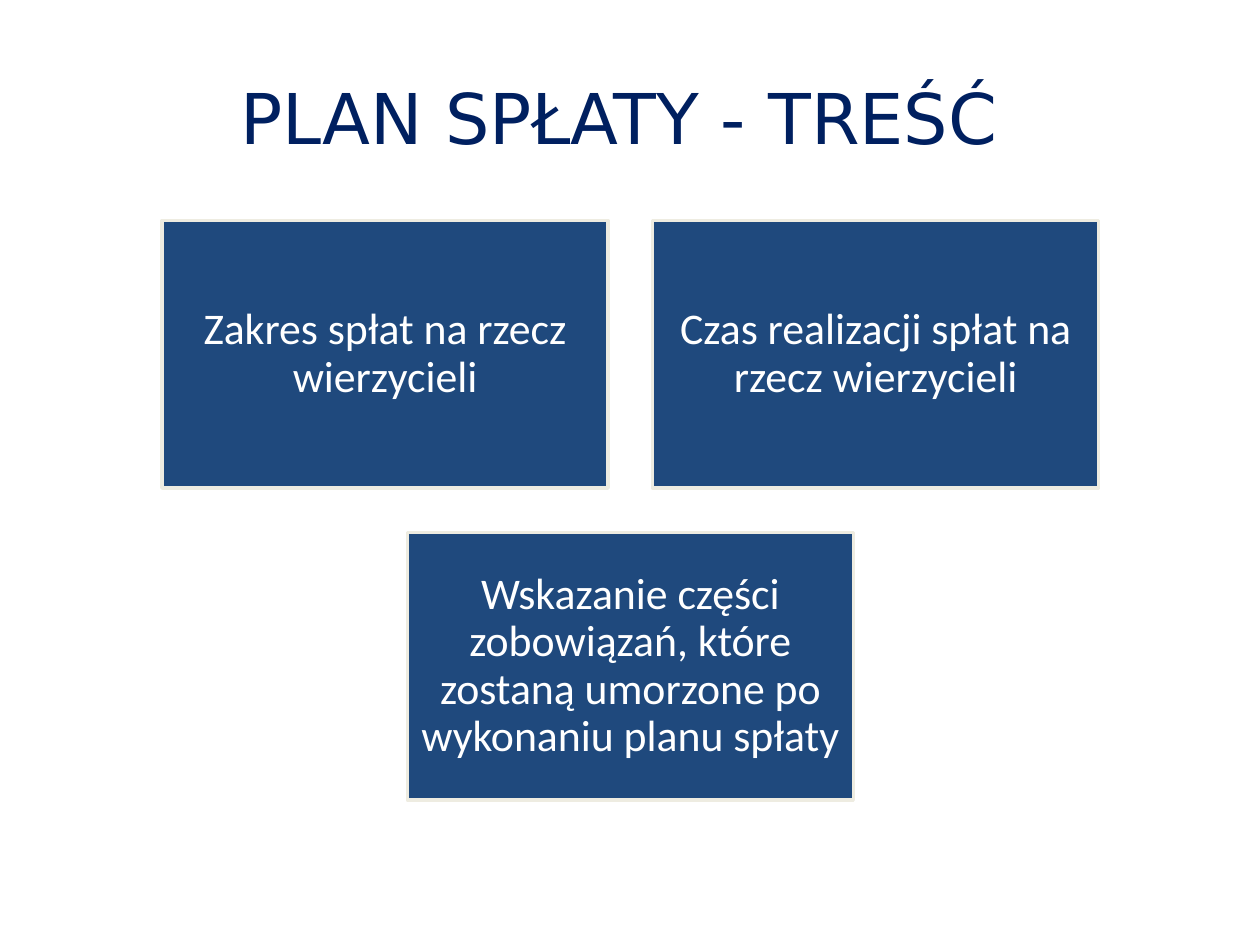
from pptx import Presentation
from pptx.dml.color import RGBColor
from pptx.enum.shapes import MSO_SHAPE
from pptx.enum.text import MSO_ANCHOR, PP_ALIGN
from pptx.util import Pt

TOPICS = [
    "Zakres spłat na rzecz wierzycieli",
    "Czas realizacji spłat na rzecz wierzycieli",
    "Wskazanie części zobowiązań, które zostaną umorzone po wykonaniu planu spłaty",
]


def rgb(value):
    """Turn a hex string into a colour."""
    return RGBColor.from_string(value)


def set_text(sp, text, font, size, color):
    """Write one centred paragraph into a shape."""
    tf = sp.text_frame
    tf.word_wrap = True
    tf.vertical_anchor = MSO_ANCHOR.MIDDLE
    p = tf.paragraphs[0]
    p.text = text
    p.alignment = PP_ALIGN.CENTER
    p.font.name = font
    p.font.size = Pt(size)
    p.font.color.rgb = rgb(color)
    return tf


def add_title(s, x, y, w, h, text):
    """Place the slide title in the given box."""
    sp = s.shapes.add_textbox(Pt(x), Pt(y), Pt(w), Pt(h))
    set_text(sp, text, "DejaVu Sans", 40, "002060")


def add_card(s, x, y, w, h, text):
    """Place one filled card with its text."""
    sp = s.shapes.add_shape(MSO_SHAPE.RECTANGLE, Pt(x), Pt(y), Pt(w), Pt(h))
    sp.shadow.inherit = False
    sp.fill.solid()
    sp.fill.fore_color.rgb = rgb("1F497D")
    sp.line.color.rgb = rgb("EEECE1")
    sp.line.width = Pt(2)
    tf = set_text(sp, text, "Calibri", 25, "FFFFFF")
    tf.margin_left = tf.margin_right = tf.margin_top = tf.margin_bottom = Pt(7)
    tf.paragraphs[0].line_spacing = 0.9


def add_card_grid(s, x, y, w, h, topics, cols=2, gap=25.4):
    """Fill the box with rows of cards, each row centred."""
    rows = [topics[i:i + cols] for i in range(0, len(topics), cols)]
    card_w = (w - gap * (cols - 1)) / cols
    card_h = (h - gap * (len(rows) - 1)) / len(rows)
    for r, row in enumerate(rows):
        indent = (cols - len(row)) * (card_w + gap) / 2
        for c, text in enumerate(row):
            add_card(s, x + indent + c * (card_w + gap),
                     y + r * (card_h + gap), card_w, card_h, text)


def main():
    """Build the slide and save it."""
    prs = Presentation()
    prs.slide_width, prs.slide_height = Pt(720), Pt(540)
    s = prs.slides.add_slide(prs.slide_layouts[6])
    add_title(s, 36, 21.6, 648, 90, "PLAN SPŁATY - TREŚĆ ")
    add_card_grid(s, 92.6, 126, 535.2, 331.2, TOPICS)
    prs.save("out.pptx")


if __name__ == "__main__":
    main()
